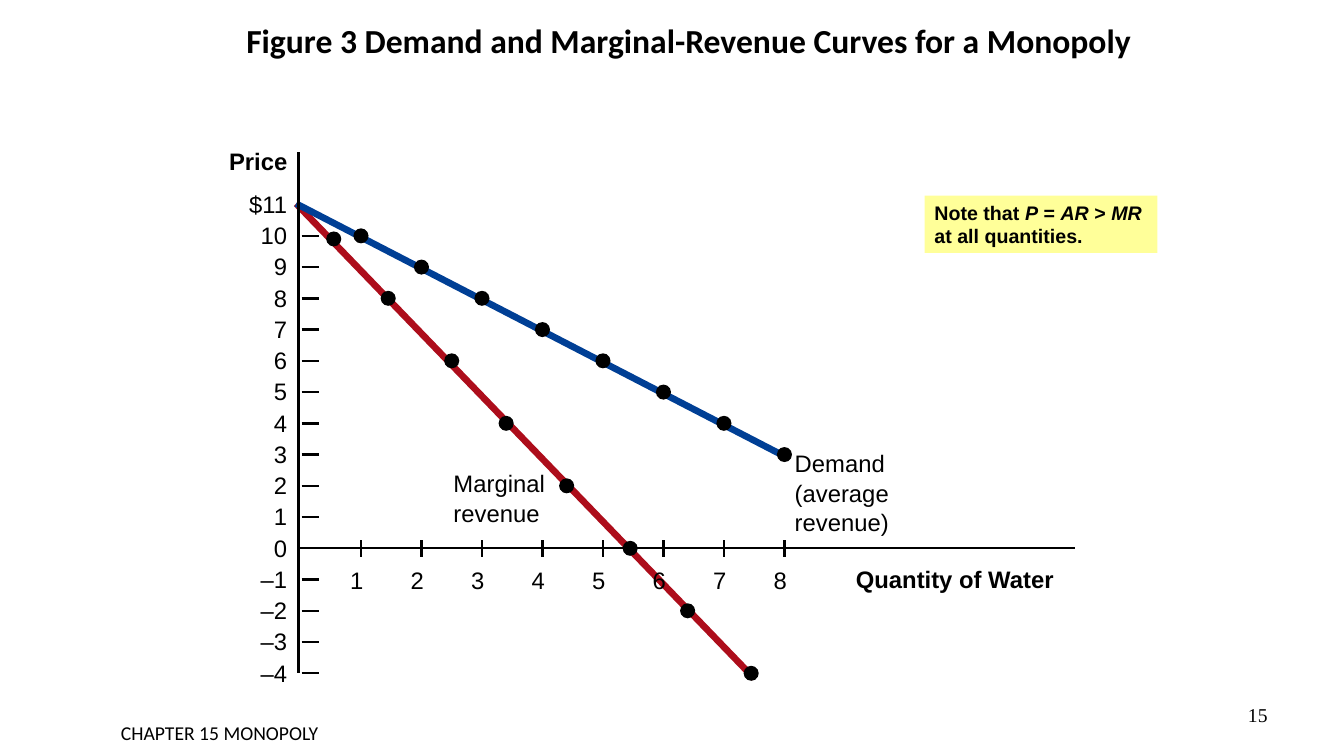
from lxml import etree
from pptx import Presentation, util as u
from pptx.dml.color import RGBColor
from pptx.enum import shapes, text
from pptx.oxml.ns import qn

BLACK = RGBColor(0, 0, 0)
RED = RGBColor(0xAD, 0x0D, 0x1B)
BLUE = RGBColor(0, 0x3F, 0x95)
YELLOW = RGBColor(0xFF, 0xFF, 0x99)

W, H = u.Inches(13.33), u.Inches(7.5)
COL, ROW = u.Inches(0.6), u.Inches(0.31)
ORIGIN_X, ORIGIN_Y = u.Inches(2.98), u.Inches(5.44)
LABEL_H = 0.94
CHAR_W = 0.22
LEFT, CENTER, RIGHT = text.PP_ALIGN.LEFT, text.PP_ALIGN.CENTER, text.PP_ALIGN.RIGHT

LABEL = {"name": "Arial", "size": u.Pt(17), "bold": False}
AXIS_TITLE = {**LABEL, "bold": True}
TITLE = {"name": "Calibri", "size": u.Pt(24), "bold": True}
NOTE = {"name": "Arial", "size": u.Pt(14), "bold": True}
PAGE = {"name": "Times New Roman", "size": u.Pt(14)}
FOOTER = {"name": "Calibri", "size": u.Pt(14)}

DEMAND = [(q, 11 - q) for q in range(1, 9)]
MARGINAL = list(zip((0.55, 1.45, 2.5, 3.4, 4.4, 5.45, 6.4, 7.45),
                    (9.9, 8, 6, 4, 2, 0, -2, -4)))


def point(q, p):
    return int(ORIGIN_X + q * COL), int(ORIGIN_Y - p * ROW)


def plot_box(q, p, cols, rows):
    return *point(q, p), int(cols * COL), int(rows * ROW)


def share_box(left, top, width, height):
    return tuple(int(v * side / 100) for v, side in
                 zip((left, top, width, height), (W, H, W, H)))


def add_line(s, start, end, color=BLACK, width=1.63):
    line = s.shapes.add_connector(shapes.MSO_CONNECTOR.STRAIGHT,
                                  *point(*start), *point(*end))
    line.line.color.rgb = color
    line.line.width = u.Pt(width)
    etree.SubElement(line._element.spPr, qn("a:effectLst"))


def add_filled(s, kind, box, color):
    sp = s.shapes.add_shape(kind, *box)
    sp.shadow.inherit = False
    sp.fill.solid()
    sp.fill.fore_color.rgb = color
    sp.line.fill.background()
    return sp


def add_dot(s, q, p):
    add_filled(s, shapes.MSO_SHAPE.OVAL,
               plot_box(q - 0.125, p + 0.24, 0.25, 0.48), BLACK)


def write(p, words, fmt, italic=False):
    r = p.add_run()
    r.text = words
    for key, value in fmt.items():
        setattr(r.font, key, value)
    r.font.italic = italic
    r.font.color.rgb = BLACK


def add_text(s, box, words, fmt, align=LEFT):
    tf = s.shapes.add_textbox(*box).text_frame
    tf.word_wrap = True
    tf.paragraphs[0].alignment = align
    write(tf.paragraphs[0], words, fmt)
    return tf


def add_label(s, q, p, cols, words, fmt=LABEL, align=LEFT):
    tf = add_text(s, plot_box(q, p, cols, LABEL_H), words, fmt, align)
    frame = {"margin_left": 0, "margin_top": 0, "margin_right": 0,
             "margin_bottom": 0, "word_wrap": False}
    for key, value in frame.items():
        setattr(tf, key, value)


def add_lines(s, q, p, cols, lines):
    for i, words in enumerate(lines):
        add_label(s, q, p - i * 0.95, cols, words)


def add_price_axis(s):
    add_line(s, (-0.03, 12.68), (-0.03, -4))
    add_label(s, -1.18, 12.84, 0.98, "Price", AXIS_TITLE)
    for price in range(11, -5, -1):
        words = "$11" if price == 11 else str(price).replace("-", "–")
        cols = CHAR_W * len(words)
        add_label(s, -0.22 - cols, price + 0.48, cols, words, align=RIGHT)
        if price not in (0, 11):
            add_line(s, (0.02, price), (0.3, price))


def add_quantity_axis(s):
    add_line(s, (-0.03, 0), (12.8, 0))
    add_label(s, 9.18, -0.52, 3.3, "Quantity of Water", AXIS_TITLE)
    for quantity in range(1, 9):
        add_line(s, (quantity, 0.26), (quantity, -0.29))
        add_label(s, quantity - 0.18, -0.55, CHAR_W, str(quantity))


def add_note(s):
    sp = add_filled(s, shapes.MSO_SHAPE.RECTANGLE,
                    share_box(68.79, 25.87, 17.33, 7.6), YELLOW)
    tf = sp.text_frame
    tf.word_wrap = True
    tf.vertical_anchor = text.MSO_ANCHOR.TOP
    p = tf.paragraphs[0]
    p.alignment = LEFT
    parts = ("Note that ", "P", " = ", "AR", " > ", "MR", " at all quantities.")
    for i, words in enumerate(parts):
        write(p, words, NOTE, italic=i % 2 == 1)


def main():
    prs = Presentation()
    prs.slide_width, prs.slide_height = W, H
    s = prs.slides.add_slide(prs.slide_layouts[6])

    title = add_text(s, share_box(17.5, 0.8, 67.5, 10),
                     "Figure 3 Demand and Marginal-Revenue Curves for a Monopoly",
                     TITLE, CENTER)
    title.vertical_anchor = text.MSO_ANCHOR.MIDDLE
    title.paragraphs[0].line_spacing = 0.8

    add_line(s, (-0.07, 11.03), (7.5, -4.16), RED, 4.75)
    add_line(s, (-0.07, 11.03), (7.98, 2.97), BLUE, 4.75)
    add_price_axis(s)
    add_quantity_axis(s)
    for q, p in DEMAND + MARGINAL:
        add_dot(s, q, p)
    add_lines(s, 8.17, 3.19, 1.57, ("Demand", "(average", "revenue)"))
    add_lines(s, 2.53, 2.55, 1.52, ("Marginal", "revenue"))
    add_note(s)

    add_text(s, share_box(88.97, 92.27, 6.08, 6.93), "15", PAGE, RIGHT)
    add_text(s, share_box(2.4, 94.67, 27.9, 4.4), "CHAPTER 15 MONOPOLY",
             FOOTER, CENTER)
    prs.save("out.pptx")


if __name__ == "__main__":
    main()
